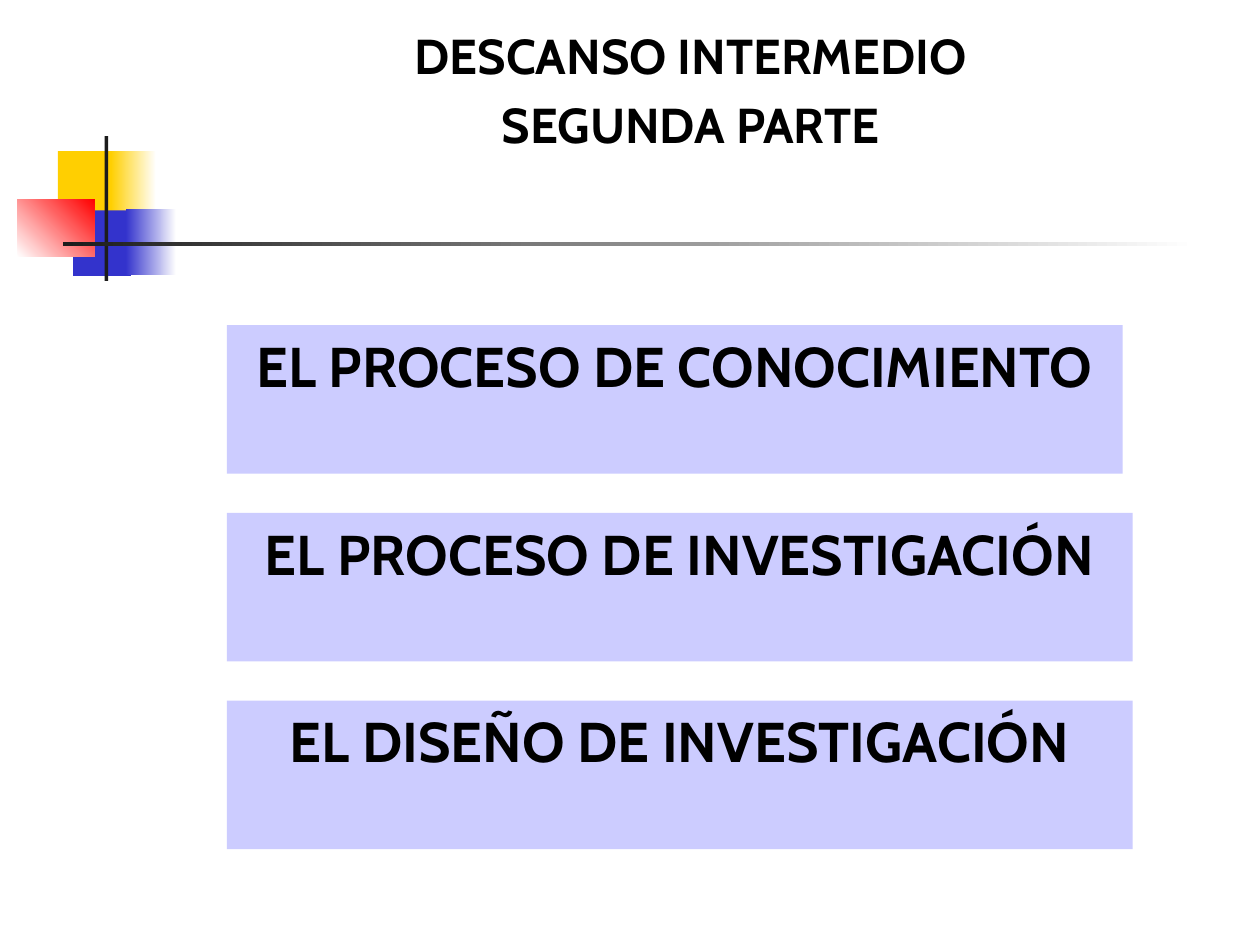
from pptx import Presentation
from pptx.dml.color import RGBColor
from pptx.enum.shapes import MSO_SHAPE as SHAPE
from pptx.enum.text import MSO_ANCHOR as ANCHOR, PP_ALIGN as ALIGN
from pptx.util import Inches, Pt

YELLOW, BLUE, RED = "FFCF01", "3333CC", "FF0000"
DARK, WHITE, BLACK, LILAC = "1C1C1C", "FFFFFF", "000000", "CCCCFF"
FONT = {"name": "Cabin", "bold": True}


def rgb(value):
    return RGBColor.from_string(value)


def add_rect(slide, x, y, w, h, colors, angle=0):
    """Rectangle with one solid colour or a gradient between two."""
    sp = slide.shapes.add_shape(SHAPE.RECTANGLE, *map(Inches, (x, y, w, h)))
    sp.shadow.inherit = False
    sp.line.fill.background()
    if len(colors) == 1:
        sp.fill.solid()
        sp.fill.fore_color.rgb = rgb(colors[0])
    else:
        sp.fill.gradient()
        sp.fill.gradient_angle = angle
        for stop, color in zip(sp.fill.gradient_stops, colors):
            stop.color.rgb = rgb(color)
    return sp


def write(sp, lines, size):
    """Centred bold lines, starting at the top of the shape."""
    tf = sp.text_frame
    tf.word_wrap = True
    tf.vertical_anchor = ANCHOR.TOP
    for i, line in enumerate(lines):
        p = tf.add_paragraph() if i else tf.paragraphs[0]
        p.alignment = ALIGN.CENTER
        p.space_before = Pt(6 if i else 0)
        r = p.add_run()
        r.text = line
        for key, value in {**FONT, "size": Pt(size)}.items():
            setattr(r.font, key, value)
        r.font.color.rgb = rgb(BLACK)


def add_ornament(slide, x, y):
    """Coloured squares crossed by two dark bars."""
    parts = [
        (0.32, 0.12, 0.48, 0.52, [YELLOW]),
        (0.74, 0.12, 0.36, 0.52, [YELLOW, WHITE]),
        (0.44, 0.59, 0.46, 0.52, [BLUE]),
        (0.86, 0.58, 0.4, 0.52, [BLUE, WHITE]),
        (0, 0.5, 0.61, 0.46, [WHITE, RED], 45),
        (0.69, 0, 0.03, 1.15, [DARK]),
        (0.36, 0.84, 9, 0.03, [DARK, WHITE]),
    ]
    for dx, dy, *rest in parts:
        add_rect(slide, x + dx, y + dy, *rest)


def add_title(slide, x, y, w, h, lines):
    box = slide.shapes.add_textbox(*map(Inches, (x, y, w, h)))
    write(box, lines, 28)


def add_topics(slide, x, y, h, pitch, topics):
    """Filled boxes stacked at an equal pitch."""
    for i, (topic, w) in enumerate(topics):
        write(add_rect(slide, x, y + i * pitch, w, h, [LILAC]), [topic], 32)


def main():
    prs = Presentation()
    prs.slide_width, prs.slide_height = Inches(10), Inches(7.5)
    slide = prs.slides.add_slide(prs.slide_layouts[6])

    add_ornament(slide, 0.14, 1.08)
    add_title(slide, 1.3, 0.15, 8.36, 1.13,
              ["DESCANSO INTERMEDIO", "SEGUNDA PARTE"])
    add_topics(slide, 1.8, 2.58, 1.18, 1.49, [
        ("EL PROCESO DE CONOCIMIENTO", 7.11),
        ("EL PROCESO DE INVESTIGACIÓN", 7.19),
        ("EL DISEÑO DE INVESTIGACIÓN", 7.19),
    ])
    prs.save("out.pptx")


if __name__ == "__main__":
    main()
